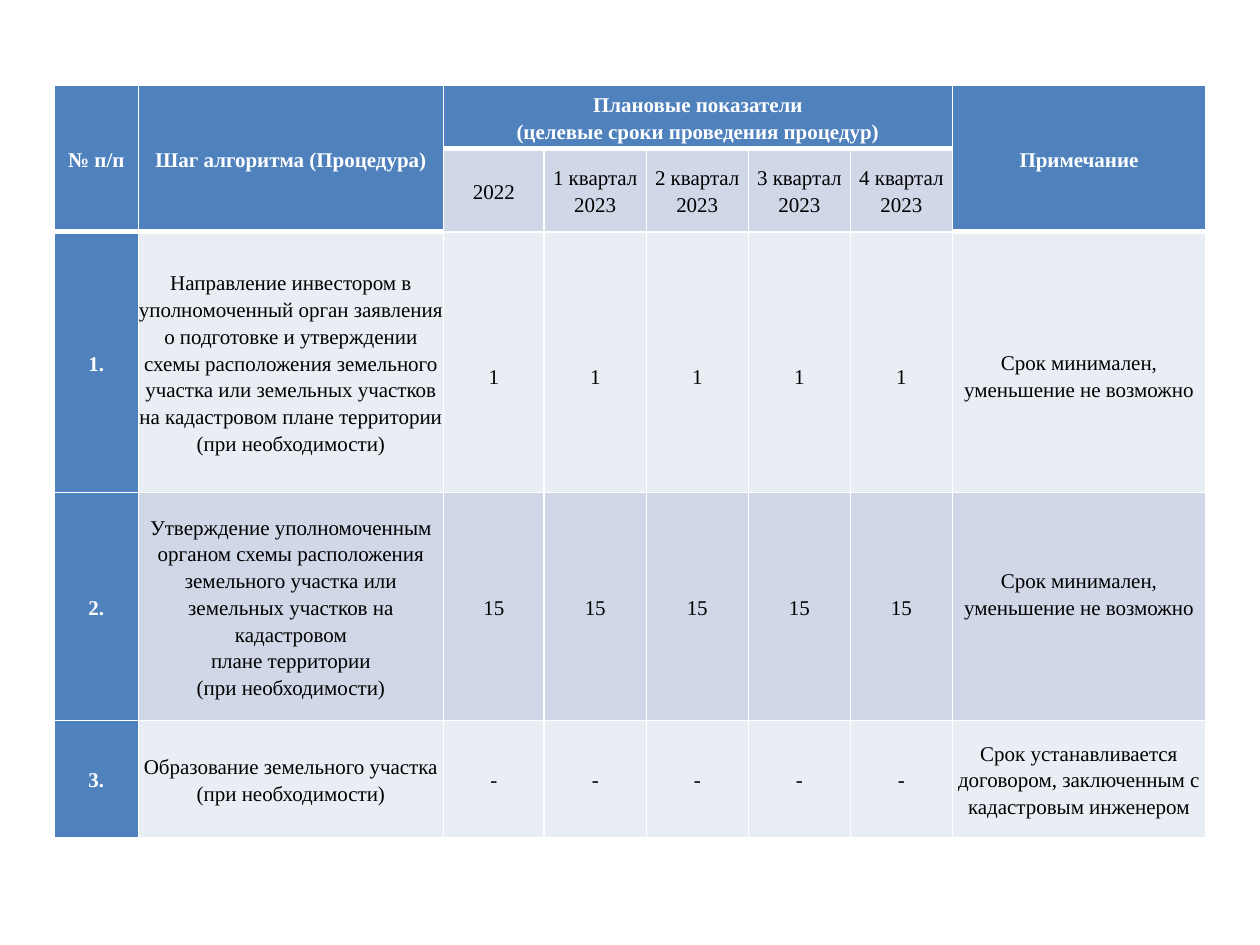
from lxml import etree
from pptx import Presentation
from pptx.dml.color import RGBColor
from pptx.enum.text import MSO_ANCHOR, PP_ALIGN
from pptx.oxml.ns import qn
from pptx.util import Inches, Pt

CENTER = PP_ALIGN.CENTER
MIDDLE = MSO_ANCHOR.MIDDLE
BLANK_LAYOUT = 6
BLUE, PALE, PALER = "4F81BD", "D0D8E8", "E9EDF4"
WHITE, BLACK = "FFFFFF", "000000"
TABLE_BOX = (0.43, 0.68, 9.14, 5.97)
COLUMN_WIDTHS = [0.67, 2.42, 0.8, 0.81, 0.81, 0.81, 0.81, 2.01]
ROW_HEIGHTS = [0.5, 0.66, 2.07, 1.81, 0.93]
TALL_HEADERS = (0, 1, 7)
MERGES = [((0, column), (1, column)) for column in TALL_HEADERS] + [((0, 2), (0, 6))]
ROW_FILLS = [BLUE, PALE, PALER, PALE, PALER]
TEXT_LINE = 0.21
MARGINS = {
    **{(2, column): {"margin_top": Inches(TEXT_LINE)} for column in range(2, 8)},
    (3, 7): {"margin_bottom": Inches(TEXT_LINE)},
}
MINIMAL_TERM = "Срок минимален, уменьшение не возможно"
ROWS = [
    ["№ п/п", "Шаг алгоритма (Процедура)",
     "Плановые показатели\n(целевые сроки проведения процедур)", *[""] * 4, "Примечание"],
    ["", "", "2022", *[f"{quarter} квартал 2023" for quarter in range(1, 5)], ""],
    ["1.", "Направление инвестором в уполномоченный орган заявления о подготовке "
     "и утверждении схемы расположения земельного участка или земельных участков "
     "на кадастровом плане территории\n(при необходимости)", *["1"] * 5, MINIMAL_TERM],
    ["2.", "Утверждение уполномоченным органом схемы расположения земельного участка "
     "или земельных участков на кадастровом\nплане территории\n(при необходимости)",
     *["15"] * 5, MINIMAL_TERM],
    ["3.", "Образование земельного участка\n(при необходимости)", *["-"] * 5,
     "Срок устанавливается договором, заключенным с кадастровым инженером"],
]


def color(value):
    """Turn a hex string into a colour."""
    return RGBColor.from_string(value)


def apply_format(target, values):
    """Set every attribute in the dict on the target."""
    for name, value in values.items():
        setattr(target, name, value)


def is_header(row, column):
    """Tell whether a cell belongs to the column headings."""
    return row == 0 or row == 1 and column in TALL_HEADERS


def add_borders(cell, row, column):
    """Draw white cell borders, thicker below the headings."""
    widths = {
        "L": 1,
        "R": 1,
        "T": 3 if row and is_header(row - 1, column) else 1,
        "B": 3 if is_header(row, column) else 1,
    }
    properties = cell._tc.get_or_add_tcPr()
    for side, width in widths.items():
        line = etree.SubElement(properties, qn(f"a:ln{side}"), w=str(Pt(width)))
        fill = etree.SubElement(line, qn("a:solidFill"))
        etree.SubElement(fill, qn("a:srgbClr"), val=WHITE)


def fill_cell(cell, row, column, text):
    """Write and format one cell."""
    strong = is_header(row, column) or column == 0
    add_borders(cell, row, column)
    cell.fill.solid()
    cell.fill.fore_color.rgb = color(BLUE if strong else ROW_FILLS[row])
    margins = dict.fromkeys(
        ("margin_left", "margin_right", "margin_top", "margin_bottom"), 0)
    apply_format(cell, {"vertical_anchor": MIDDLE, **margins, **MARGINS.get((row, column), {})})
    cell.text = text
    for paragraph in cell.text_frame.paragraphs:
        apply_format(paragraph, {"alignment": CENTER, "line_spacing": 1.15})
        apply_format(paragraph.font, {"size": Pt(12)})
        for run in paragraph.runs:
            apply_format(run.font, {"name": "Times New Roman", "size": Pt(12), "bold": strong})
            run.font.color.rgb = color(WHITE if strong else BLACK)


def add_schedule(slide, box):
    """Place the schedule table, scaling its grid to the box."""
    left, top, width, height = box
    frame = slide.shapes.add_table(
        len(ROWS), len(COLUMN_WIDTHS), *[Inches(length) for length in box])
    table = frame.table
    apply_format(table, {"first_row": False, "horz_banding": False})
    for column, share in zip(table.columns, COLUMN_WIDTHS):
        column.width = Inches(width * share / sum(COLUMN_WIDTHS))
    for row, share in zip(table.rows, ROW_HEIGHTS):
        row.height = Inches(height * share / sum(ROW_HEIGHTS))
    for first, last in MERGES:
        table.cell(*first).merge(table.cell(*last))
    for row, texts in enumerate(ROWS):
        for column, text in enumerate(texts):
            fill_cell(table.cell(row, column), row, column, text)


def main():
    """Build and save the presentation."""
    presentation = Presentation()
    apply_format(presentation, {"slide_width": Inches(10), "slide_height": Inches(7.5)})
    slide = presentation.slides.add_slide(presentation.slide_layouts[BLANK_LAYOUT])
    add_schedule(slide, TABLE_BOX)
    presentation.save("out.pptx")


if __name__ == "__main__":
    main()
